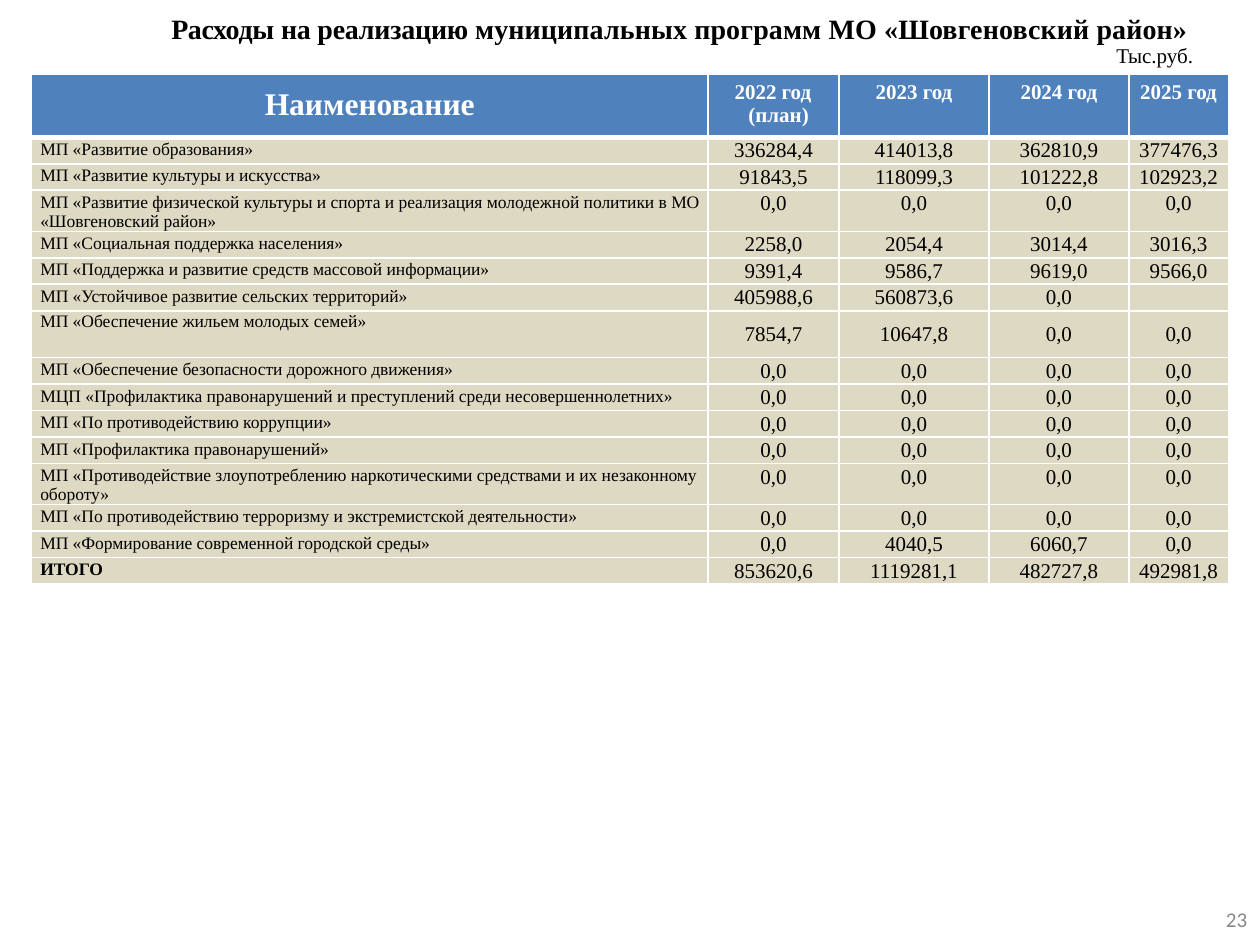
from lxml.etree import SubElement
from pptx import Presentation
from pptx.dml.color import RGBColor
from pptx.enum.text import MSO_AUTO_SIZE, PP_ALIGN as Align
from pptx.oxml.ns import qn
from pptx.util import Inches, Pt

SERIF = "Times New Roman"
BLACK, WHITE, BLUE, SAND = "000000", "FFFFFF", "4F81BC", "DDD9C3"
HOUSING_ROW = 7
YEARS = ["2022 год (план)", "2023 год", "2024 год", "2025 год"]
NO_FUNDS = ["0,0"] * 4
PROGRAMS = [
    ("МП «Развитие образования»", ["336284,4", "414013,8", "362810,9", "377476,3"]),
    ("МП «Развитие культуры и искусства»", ["91843,5", "118099,3", "101222,8", "102923,2"]),
    ("МП «Развитие физической культуры и спорта и реализация молодежной политики в МО "
     "«Шовгеновский район»", NO_FUNDS),
    ("МП «Социальная поддержка населения»", ["2258,0", "2054,4", "3014,4", "3016,3"]),
    ("МП «Поддержка и развитие средств массовой информации»",
     ["9391,4", "9586,7", "9619,0", "9566,0"]),
    ("МП «Устойчивое развитие сельских территорий»", ["405988,6", "560873,6", "0,0", ""]),
    ("МП «Обеспечение жильем молодых семей»", ["7854,7", "10647,8", "0,0", "0,0"]),
    ("МП «Обеспечение безопасности дорожного движения»", NO_FUNDS),
    ("МЦП «Профилактика правонарушений и преступлений среди несовершеннолетних»", NO_FUNDS),
    ("МП «По противодействию коррупции»", NO_FUNDS),
    ("МП «Профилактика правонарушений»", NO_FUNDS),
    ("МП «Противодействие злоупотреблению наркотическими средствами и их незаконному обороту»",
     NO_FUNDS),
    ("МП «По противодействию терроризму и экстремистской деятельности»", NO_FUNDS),
    ("МП «Формирование современной городской среды»", ["0,0", "4040,5", "6060,7", "0,0"]),
    ("ИТОГО", ["853620,6", "1119281,1", "482727,8", "492981,8"]),
]


def style_runs(paragraph, size, color=BLACK, bold=False, font=SERIF):
    for run in paragraph.runs:
        run.font.size, run.font.name, run.font.bold = Pt(size), font, bold
        run.font.color.rgb = RGBColor.from_string(color)


def add_text_frame(left, top, width, height, inset_top=0):
    frame = slide.shapes.add_textbox(
        Inches(left), Inches(top), Inches(width), Inches(height)).text_frame
    frame.word_wrap, frame.auto_size = True, MSO_AUTO_SIZE.SHAPE_TO_FIT_TEXT
    frame.margin_left = frame.margin_right = frame.margin_bottom = 0
    frame.margin_top = Inches(inset_top)
    return frame


prs = Presentation()
prs.slide_width, prs.slide_height = Inches(10), Inches(7.5)
slide = prs.slides.add_slide(prs.slide_layouts[6])

# Expenditure table
rows = [("Наименование", YEARS)] + PROGRAMS
table = slide.shapes.add_table(
    len(rows), 5, Inches(0.25), Inches(0.59), Inches(9.5), Inches(4.1)).table
table.horz_banding = False
for column, width in zip(table.columns, [5.37, 1.04, 1.19, 1.11, 0.79]):
    column.width = Inches(width)

for r, (program, amounts) in enumerate(rows):
    table.rows[r].height = Inches({0: 0.5, HOUSING_ROW: 0.37}.get(r, 0.21))
    for c, text in enumerate([program, *amounts]):
        cell = table.cell(r, c)
        cell.text_frame.text = text
        paragraph = cell.text_frame.paragraphs[0]
        paragraph.alignment = Align.CENTER
        cell.margin_left = cell.margin_right = cell.margin_bottom = 0
        if r == 0:
            inset_top = 0.05 if c else 0.1
            style_runs(paragraph, 12 if c else 18, WHITE, bold=True)
        elif c == 0:
            inset_top = 0.01 if r == HOUSING_ROW else 0.02
            paragraph.alignment = Align.LEFT
            cell.margin_left = Inches(0.07)
            style_runs(paragraph, 10, bold=r == len(PROGRAMS))
        else:
            inset_top = 0.09 if r == HOUSING_ROW else 0.01
            if r != HOUSING_ROW:
                paragraph.line_spacing = Pt(13.7)
            style_runs(paragraph, 12)
        cell.margin_top = Inches(inset_top)
        if not text:
            SubElement(paragraph._p, qn("a:endParaRPr"), sz="1200")

        cell_props = cell._tc.get_or_add_tcPr()
        for side in "LRTB":
            thick = (r, side) in [(0, "B"), (1, "T")]
            border = SubElement(cell_props, qn(f"a:ln{side}"), w=str(Pt(3 if thick else 1)))
            SubElement(SubElement(border, qn("a:solidFill")), qn("a:srgbClr"), val=WHITE)
        cell.fill.solid()
        cell.fill.fore_color.rgb = RGBColor.from_string(SAND if r else BLUE)

# The plan year wraps onto a hanging second line
plan_year = table.cell(0, 1).text_frame.paragraphs[0]
plan_year.alignment = Align.LEFT
plan_props = plan_year._p.get_or_add_pPr()
plan_props.set("marL", str(Inches(0.32)))
plan_props.set("indent", str(Inches(-0.11)))

# Page number
page_number = add_text_frame(9.69, 7.22, 0.27, 0.25)
page_number.text = "23"
page_number.margin_left = Inches(0.04)
page_number.paragraphs[0].line_spacing = Pt(12.4)
style_runs(page_number.paragraphs[0], 12, "888888", font="Calibri")

# Title and unit
heading = add_text_frame(1.33, 0.1, 8.43, 0.46, 0.01)
title, unit = heading.paragraphs[0], heading.add_paragraph()
for text, spacing in [("Расходы", -20), (" на реализацию ", -10),
                      ("муниципальных программ МО «Шовгеновский район»", 10)]:
    run = title.add_run()
    run.text = text
    run.font._element.set("spc", str(spacing))
unit.text = "Тыс.руб."
for paragraph, indent, leading, size in [(title, 0.03, 17.8, 16), (unit, 7.53, 12.9, 12)]:
    paragraph._p.get_or_add_pPr().set("marL", str(Inches(indent)))
    paragraph.line_spacing = Pt(leading)
    style_runs(paragraph, size, bold=paragraph is title)

prs.save("out.pptx")
